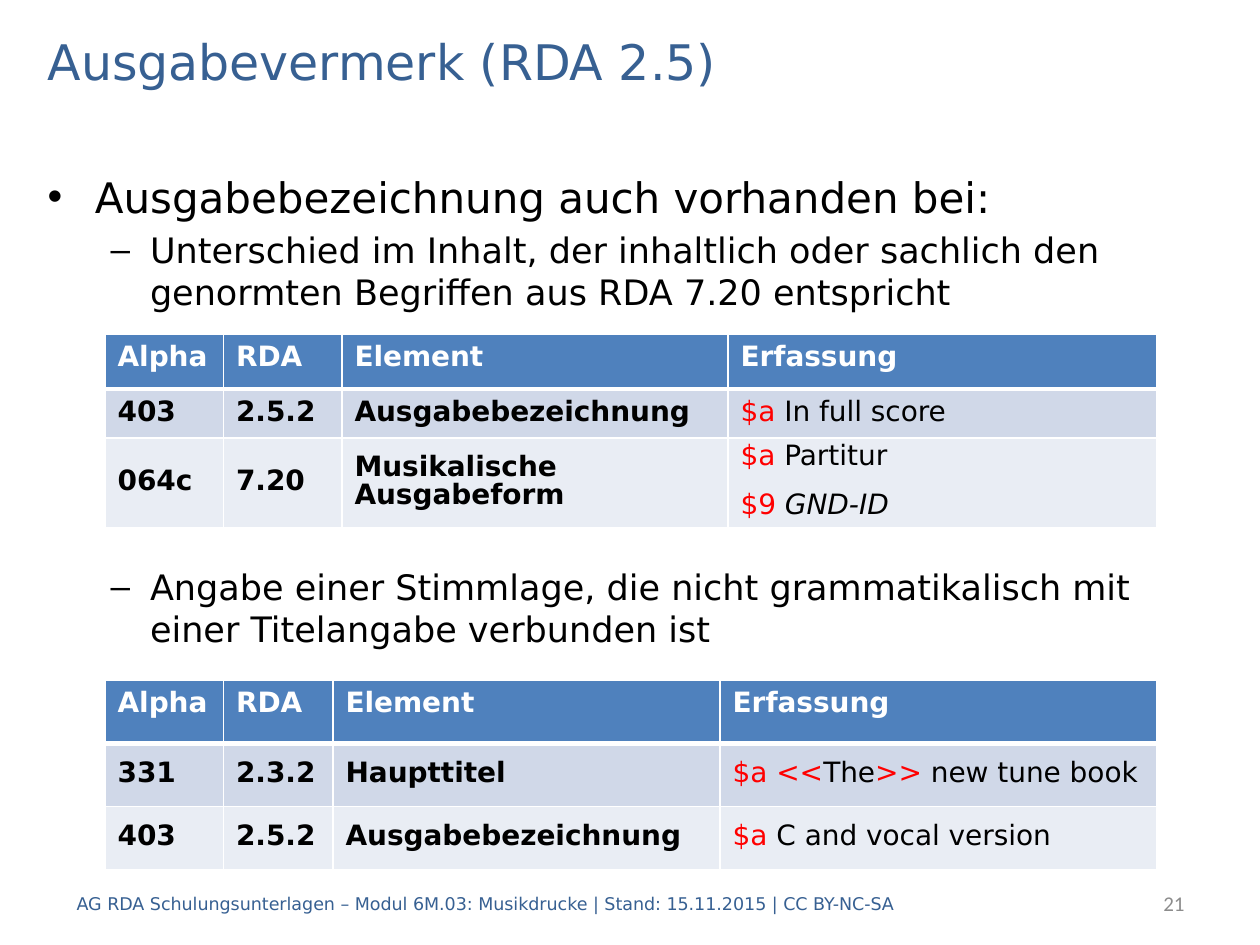
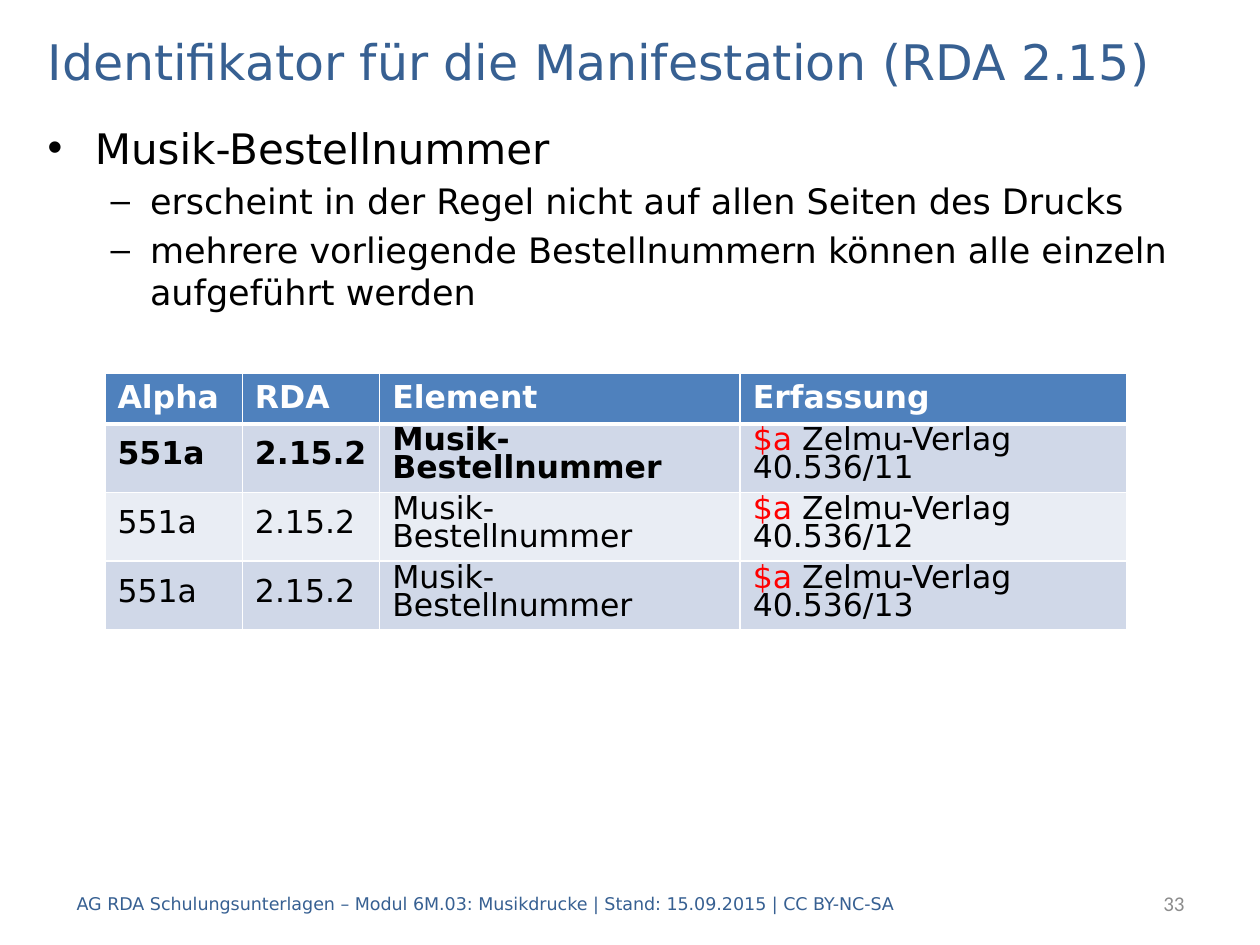
from pptx import Presentation
from pptx.dml.color import RGBColor
from pptx.enum.text import MSO_ANCHOR, MSO_AUTO_SIZE, PP_ALIGN
from pptx.oxml import parse_xml
from pptx.oxml.ns import nsdecls
from pptx.util import Pt

# Shared look
FONT = "DejaVu Sans"
TITLE_BLUE = "376092"
HEADER_BLUE = "4F81BD"
BANDS = ["D0D8E8", "E9EDF4"]
WHITE, BLACK, RED, GREY = "FFFFFF", "000000", "FF0000", "8C8C8C"
HEADINGS = ["Alpha", "RDA", "Element", "Erfassung"]
FOOTER = "AG RDA Schulungsunterlagen – Modul 6M.03: Musikdrucke | Stand: {} | CC BY-NC-SA"


def set_font(font, size, colour, name=FONT, bold=False):
    font.size, font.name, font.bold = Pt(size), name, bold
    font.color.rgb = RGBColor.from_string(colour)


def style_cell(cell, fill, bottom_width):
    properties = cell._tc.get_or_add_tcPr()
    for side, width in zip("LRTB", (1, 1, 1, bottom_width)):
        properties.append(parse_xml(
            f'<a:ln{side} {nsdecls("a")} w="{Pt(width)}"><a:solidFill>'
            f'<a:srgbClr val="{WHITE}"/></a:solidFill></a:ln{side}>'))
    cell.fill.solid()
    cell.fill.fore_color.rgb = RGBColor.from_string(fill)


# Content: in the last column, "|" switches between red codes and black values
slides = [
    {
        "title": "Ausgabevermerk (RDA 2.5)",
        "number": "21",
        "date": "15.11.2015",
        "body_top": 60.5,
        "first_line_inset": 37.4,
        # level, text, space before (None keeps the template's)
        "points": [
            (0, "Ausgabebezeichnung auch vorhanden bei:", None),
            (1, "Unterschied im Inhalt, der inhaltlich oder sachlich den "
                "genormten Begriffen aus RDA 7.20 entspricht", None),
            (1, "Angabe einer Stimmlage, die nicht grammatikalisch mit "
                "einer Titelangabe verbunden ist", 144.7),
        ],
        "tables": [
            {
                "top": 190.8, "size": 16, "bold_rows": 2,
                "columns": [67.7, 67.7, 220.6, 245],
                "heights": [31.5, 28, 51.2],
                "rows": [
                    ["403", "2.5.2", "Ausgabebezeichnung", "$a |In full score"],
                    ["064c", "7.20", "Musikalische Ausgabeform",
                     "$a |Partitur\n$9 |GND-ID"],
                ],
            },
            {
                "top": 389, "size": 16, "bold_rows": 2,
                "columns": [67.7, 62.6, 221.2, 249.5],
                "heights": [36, 36, 36],
                "rows": [
                    ["331", "2.3.2", "Haupttitel", "$a <<|The|>> |new tune book"],
                    ["403", "2.5.2", "Ausgabebezeichnung", "$a |C and vocal version"],
                ],
            },
        ],
    },
    {
        "title": "Identifikator für die Manifestation (RDA 2.15)",
        "number": "33",
        "date": "15.09.2015",
        "body_top": 66.2,
        "first_line_inset": 3.6,
        "points": [
            (0, "Musik-Bestellnummer", None),
            (1, "erscheint in der Regel nicht auf allen Seiten des Drucks", None),
            (1, "mehrere vorliegende Bestellnummern können alle einzeln "
                "aufgeführt werden", None),
        ],
        "tables": [
            {
                "top": 213.4, "size": 18, "bold_rows": 1,
                "columns": [78.5, 78.5, 206, 221],
                "heights": [27, 39.2, 39.2, 39.2],
                "rows": [
                    ["551a", "2.15.2", "Musik-Bestellnummer",
                     f"$a |Zelmu-Verlag 40.536/{part}"]
                    for part in (11, 12, 13)
                ],
            },
        ],
    },
]

presentation = Presentation()
presentation.slide_width, presentation.slide_height = Pt(720), Pt(540)

for content in slides:
    slide = presentation.slides.add_slide(presentation.slide_layouts[1])

    # Title
    title = slide.shapes.title
    title.left, title.top, title.width, title.height = Pt(20), Pt(14.4), Pt(680.4), Pt(40.3)
    title.text_frame.text = content["title"]
    title.text_frame.auto_size = MSO_AUTO_SIZE.NONE
    title.text_frame.vertical_anchor = MSO_ANCHOR.MIDDLE
    heading = title.text_frame.paragraphs[0]
    heading.alignment = PP_ALIGN.LEFT
    set_font(heading.font, 28, TITLE_BLUE)

    # Bullet list
    body = slide.placeholders[1]
    body.left, body.top, body.width = Pt(20), Pt(content["body_top"]), Pt(680.4)
    body.height = Pt(496.8 - content["body_top"])
    points = body.text_frame
    points.auto_size = MSO_AUTO_SIZE.NONE
    points.margin_top = Pt(content["first_line_inset"])
    points.text = "\n".join(text for _, text, _ in content["points"])
    for point, (level, _, gap) in zip(points.paragraphs, content["points"]):
        point.level = level
        set_font(point.font, 20 if level else 24, BLACK)
        if gap:
            point.space_before = Pt(gap)

    # Footer and slide number
    for text, left, width, align, size, colour, font_name in [
        (FOOTER.format(content["date"]), 36.7, 604, PP_ALIGN.LEFT, 10, TITLE_BLUE, FONT),
        (content["number"], 569.5, 114.5, PP_ALIGN.RIGHT, 12, GREY, "Calibri"),
    ]:
        note = slide.shapes.add_textbox(Pt(left), Pt(501.8), Pt(width), Pt(28.8)).text_frame
        note.word_wrap = True
        note.vertical_anchor = MSO_ANCHOR.MIDDLE
        note.text = text
        note.paragraphs[0].alignment = align
        set_font(note.paragraphs[0].font, size, colour, font_name)

    # Tables
    for spec_table in content["tables"]:
        columns, heights = spec_table["columns"], spec_table["heights"]
        table = slide.shapes.add_table(
            len(heights), len(columns), Pt(60), Pt(spec_table["top"]),
            Pt(sum(columns)), Pt(sum(heights))).table
        for column, width in zip(table.columns, columns):
            column.width = Pt(width)
        for row, height in zip(table.rows, heights):
            row.height = Pt(height)

        for cell, text in zip(table.rows[0].cells, HEADINGS):
            style_cell(cell, HEADER_BLUE, 3)
            cell.text = text
            set_font(cell.text_frame.paragraphs[0].font, spec_table["size"], WHITE, bold=True)

        for r, values in enumerate(spec_table["rows"]):
            for c, value in enumerate(values):
                cell = table.cell(r + 1, c)
                style_cell(cell, BANDS[r % 2], 1)
                cell.vertical_anchor = MSO_ANCHOR.MIDDLE
                is_entry = c == len(values) - 1
                bold = r < spec_table["bold_rows"] and not is_entry
                cell.text = "\n".join("" if is_entry else line for line in value.split("\n"))
                for entry, line in zip(cell.text_frame.paragraphs, value.split("\n")):
                    entry.line_spacing = Pt(16)
                    entry.space_before = entry.space_after = Pt(6)
                    set_font(entry.font, spec_table["size"], BLACK, bold=bold)
                    if is_entry:
                        for i, part in enumerate(line.split("|")):
                            run = entry.add_run()
                            run.text = part
                            set_font(run.font, spec_table["size"], BLACK if i % 2 else RED)
                            if part == "GND-ID":
                                run.font.italic = True

presentation.save("out.pptx")
